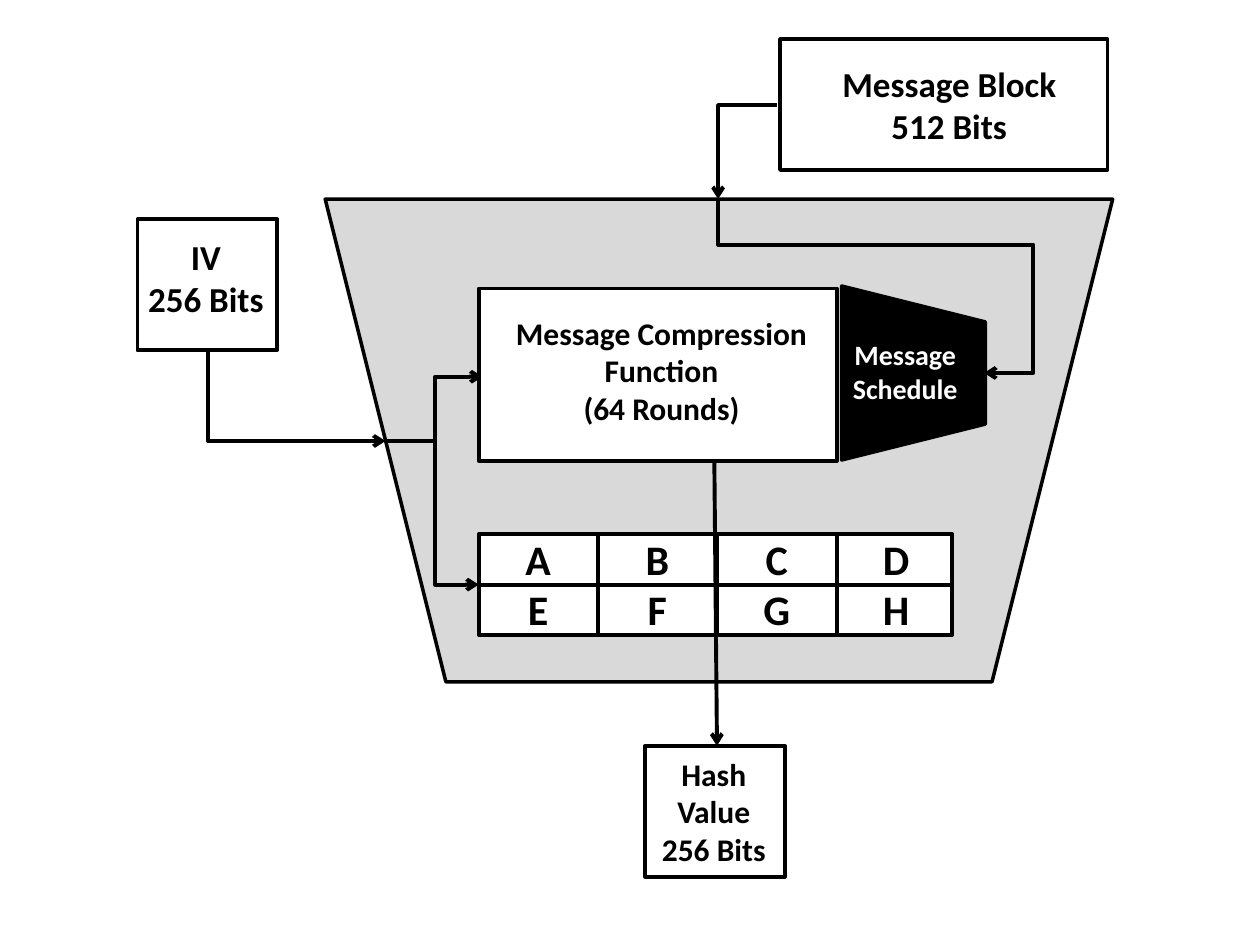
from dataclasses import dataclass

from lxml import etree
from pptx import Presentation
from pptx.dml.color import RGBColor
from pptx.enum import shapes, text
from pptx.oxml.ns import qn
from pptx.util import Pt

BLACK = RGBColor(0x00, 0x00, 0x00)
WHITE = RGBColor(0xFF, 0xFF, 0xFF)
GREY = RGBColor(0xD9, 0xD9, 0xD9)
FONT = "Calibri"
RECT = shapes.MSO_SHAPE.RECTANGLE
TRAPEZOID = shapes.MSO_SHAPE.TRAPEZOID

GRID_LEFT, GRID_TOP, GRID_WIDTH, GRID_HEIGHT = 273.6, 305.3, 270.7, 57.6
COLUMN_STEP = 68.2
LETTER_TOP, LETTER_STEP = 301.4, 28.4
REGISTERS = ("ABCD", "EFGH")


@dataclass(frozen=True)
class Block:
    left: float
    top: float
    width: float
    height: float
    fill: RGBColor = WHITE
    line: float = 2
    preset: shapes.MSO_SHAPE = RECT
    rotation: float = 0


@dataclass(frozen=True)
class Label:
    left: float
    top: float
    width: float
    height: float
    lines: tuple[str, ...]
    size: float
    color: RGBColor = BLACK


@dataclass(frozen=True)
class Wire:
    start: tuple[float, float]
    end: tuple[float, float]
    preset: str = "line"
    adjust: tuple[float, ...] = ()
    turned: bool = False
    arrow: bool = True


CHIP = Block(185.8, 113.8, 450, 275.8, GREY, preset=TRAPEZOID, rotation=180)
GRID = Block(GRID_LEFT, GRID_TOP, GRID_WIDTH, GRID_HEIGHT, line=2.25)

GRID_LINES = [
    Wire((GRID_LEFT, 334.1), (GRID_LEFT + GRID_WIDTH, 334.1), arrow=False)
] + [
    Wire((GRID_LEFT + i * COLUMN_STEP, GRID_TOP),
         (GRID_LEFT + i * COLUMN_STEP, 361.8), arrow=False)
    for i in (1, 2, 3)
]

ARROWS = [
    Wire((118.8, 200.2), (220.3, 252), "bentConnector2", turned=True),
    Wire((220.3, 252), (275.8, 215.3), "bentConnector3", (0.514,)),
    Wire((220.3, 252), (273.6, 334.1), "bentConnector3", (0.533,)),
    Wire((408.2, 262.8), (409.7, 426.2)),
    Wire((444.2, 60.1), (410.4, 113.8), "bentConnector2"),
    Wire((410.4, 113.8), (562.3, 213.1), "bentConnector4", (0.262, 1.185), True),
]

BLOCKS = [
    Block(78.5, 125.3, 79.9, 74.9),
    Block(445.7, 22.3, 187.2, 74.9),
    Block(472.3, 172.1, 99.4, 82.1, BLACK, preset=TRAPEZOID, rotation=90),
    Block(273.6, 164.9, 204.5, 98.6, line=2.25),
    Block(368.6, 426.2, 79.9, 74.9),
]

LABELS = [
    Label(75.6, 131, 84.2, 55.4, ("IV", "256 Bits"), 20),
    Label(444.2, 32.4, 196.6, 55.4, ("Message Block", "512 Bits"), 20),
    Label(475.2, 189.4, 84.2, 46.1, ("Message Schedule",), 16, WHITE),
    Label(285.1, 175.7, 185.8, 72.7,
          ("Message Compression Function", "(64 Rounds)"), 18),
    Label(365.8, 427.7, 84.2, 72.7, ("Hash Value", "256 Bits"), 18),
] + [
    Label(GRID_LEFT + col * COLUMN_STEP, LETTER_TOP + row * LETTER_STEP,
          67.7, 36, (letter,), 24)
    for row, letters in enumerate(REGISTERS)
    for col, letter in enumerate(letters)
]


def add_block(s, block: Block) -> None:
    sp = s.shapes.add_shape(block.preset, Pt(block.left), Pt(block.top),
                            Pt(block.width), Pt(block.height))
    sp.rotation = block.rotation
    sp.shadow.inherit = False
    sp.fill.solid()
    sp.fill.fore_color.rgb = block.fill
    sp.line.color.rgb = BLACK
    sp.line.width = Pt(block.line)


def add_wire(s, wire: Wire) -> None:
    (x1, y1), (x2, y2) = wire.start, wire.end
    c = s.shapes.add_connector(shapes.MSO_CONNECTOR.STRAIGHT,
                               Pt(x1), Pt(y1), Pt(x2), Pt(y2))
    c.line.color.rgb = BLACK
    c.line.width = Pt(2.25)
    props = c._element.spPr
    geometry = props.find(qn("a:prstGeom"))
    geometry.set("prst", wire.preset)
    guides = geometry.find(qn("a:avLst"))
    for i, value in enumerate(wire.adjust, 1):
        etree.SubElement(guides, qn("a:gd"), name=f"adj{i}",
                         fmla=f"val {round(value * 100000)}")
    if wire.turned:
        width, height = y2 - y1, x2 - x1
        c.left, c.top = Pt((x1 + x2 - width) / 2), Pt((y1 + y2 - height) / 2)
        c.width, c.height = Pt(width), Pt(height)
        frame = props.find(qn("a:xfrm"))
        frame.set("rot", "16200000")
        frame.set("flipH", "1")
    if wire.arrow:
        etree.SubElement(props.find(qn("a:ln")), qn("a:tailEnd"), type="arrow")
    etree.SubElement(props, qn("a:effectLst"))


def add_label(s, label: Label) -> None:
    sp = s.shapes.add_textbox(Pt(label.left), Pt(label.top),
                              Pt(label.width), Pt(label.height))
    tf = sp.text_frame
    tf.word_wrap = True
    tf.auto_size = text.MSO_AUTO_SIZE.SHAPE_TO_FIT_TEXT
    for i, line in enumerate(label.lines):
        p = tf.add_paragraph() if i else tf.paragraphs[0]
        p.alignment = text.PP_ALIGN.CENTER
        r = p.add_run()
        r.text = line
        r.font.name = FONT
        r.font.size = Pt(label.size)
        r.font.bold = True
        r.font.color.rgb = label.color


def main() -> None:
    prs = Presentation()
    prs.slide_width, prs.slide_height = Pt(720), Pt(540)
    s = prs.slides.add_slide(prs.slide_layouts[6])
    for block in (CHIP, GRID):
        add_block(s, block)
    for wire in GRID_LINES + ARROWS:
        add_wire(s, wire)
    for block in BLOCKS:
        add_block(s, block)
    for label in LABELS:
        add_label(s, label)
    prs.save("out.pptx")


if __name__ == "__main__":
    main()
